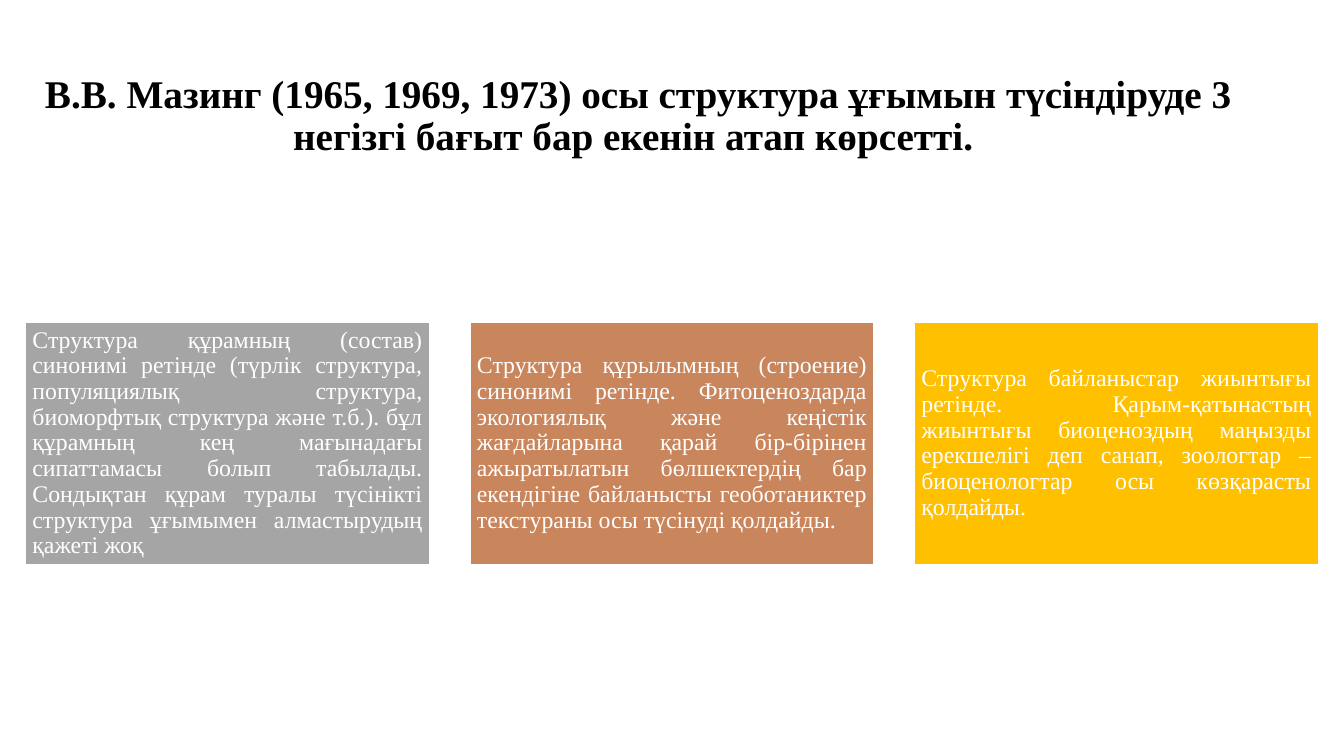
from dataclasses import dataclass

from pptx import Presentation
from pptx.dml.color import RGBColor
from pptx.enum.shapes import MSO_SHAPE
from pptx.enum.text import MSO_ANCHOR, PP_ALIGN
from pptx.shapes.autoshape import Shape
from pptx.slide import Slide
from pptx.util import Pt

FONT = "Times New Roman"
COLORS = {
    "black": "000000",
    "white": "FFFFFF",
    "gray": "A5A5A5",
    "clay": "C9855C",
    "gold": "FFC000",
}
LEFT, TOP, WIDTH, HEIGHT, STEP = 18.2, 230, 288.5, 173.3, 317.5


@dataclass
class Card:
    fill: str
    text: str


TITLE = (
    "В.В. Мазинг (1965, 1969, 1973) осы структура ұғымын түсіндіруде 3 "
    "негізгі бағыт бар екенін атап көрсетті. "
)
CARDS = [
    Card(
        "gray",
        "Структура құрамның (состав) синонимі ретінде (түрлік структура, "
        "популяциялық структура, биоморфтық структура және т.б.). бұл "
        "құрамның кең мағынадағы сипаттамасы болып табылады. Сондықтан құрам "
        "туралы түсінікті структура ұғымымен алмастырудың қажеті жоқ",
    ),
    Card(
        "clay",
        "Структура құрылымның (строение) синонимі ретінде. Фитоценоздарда "
        "экологиялық және кеңістік жағдайларына қарай бір-бірінен "
        "ажыратылатын бөлшектердің бар екендігіне байланысты геоботаниктер "
        "текстураны осы түсінуді қолдайды.",
    ),
    Card(
        "gold",
        "Структура байланыстар жиынтығы ретінде. Қарым-қатынастың жиынтығы "
        "биоценоздың маңызды ерекшелігі деп санап, зоологтар – "
        "биоценологтар осы көзқарасты қолдайды.",
    ),
]


def shade(name: str) -> RGBColor:
    return RGBColor.from_string(COLORS[name])


def write(shape: Shape, text: str, *, size: float, color: str,
          align: PP_ALIGN, bold: bool = False, side: float = 7.2,
          edge: float = 3.6) -> None:
    """Fill a shape with one paragraph, centred from top to bottom."""
    frame = shape.text_frame
    frame.word_wrap = True
    frame.vertical_anchor = MSO_ANCHOR.MIDDLE
    frame.margin_left = frame.margin_right = Pt(side)
    frame.margin_top = frame.margin_bottom = Pt(edge)
    para = frame.paragraphs[0]
    para.alignment = align
    para.line_spacing = 0.9
    run = para.add_run()
    run.text = text
    run.font.name = FONT
    run.font.size = Pt(size)
    run.font.bold = bold
    run.font.color.rgb = shade(color)


def draw(slide: Slide, card: Card, left: float) -> None:
    box = slide.shapes.add_shape(
        MSO_SHAPE.RECTANGLE, Pt(left), Pt(TOP), Pt(WIDTH), Pt(HEIGHT))
    box.shadow.inherit = False
    box.fill.solid()
    box.fill.fore_color.rgb = shade(card.fill)
    box.line.color.rgb = shade("white")
    box.line.width = Pt(1)
    write(box, card.text, size=17, color="white", align=PP_ALIGN.JUSTIFY,
          side=5, edge=5)


def main() -> None:
    deck = Presentation()
    deck.slide_width, deck.slide_height = Pt(960), Pt(540)
    slide = deck.slides.add_slide(deck.slide_layouts[6])
    title = slide.shapes.add_textbox(Pt(18), Pt(34), Pt(875.5), Pt(98.5))
    write(title, TITLE, size=28, color="black", align=PP_ALIGN.CENTER,
          bold=True)
    for i, card in enumerate(CARDS):
        draw(slide, card, LEFT + i * STEP)
    deck.save("out.pptx")


if __name__ == "__main__":
    main()
